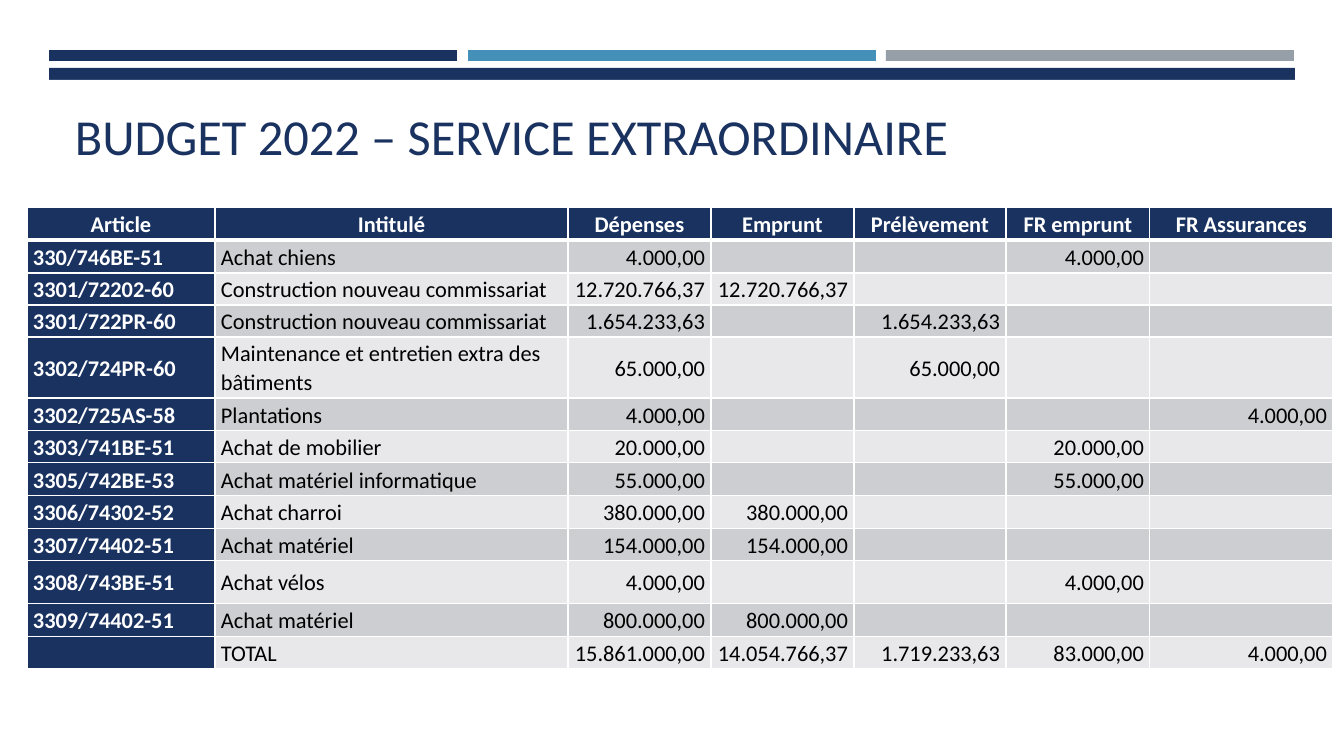
from lxml.etree import SubElement
from pptx import Presentation
from pptx.dml.color import RGBColor
from pptx.enum.shapes import MSO_SHAPE as Shape
from pptx.enum.text import MSO_ANCHOR as Anchor, PP_ALIGN as Align
from pptx.oxml.ns import qn
from pptx.util import Pt

PX = 914400 / 100.8
NAVY = RGBColor(0x1A, 0x32, 0x60)
BLUE = RGBColor(0x45, 0x90, 0xB8)
GREY = RGBColor(0x96, 0x9F, 0xA7)
WHITE = RGBColor(0xFF, 0xFF, 0xFF)
BLACK = RGBColor(0x00, 0x00, 0x00)
DARK_ROW = RGBColor(0xCD, 0xCE, 0xD2)
LIGHT_ROW = RGBColor(0xE8, 0xE8, 0xEA)

HEADINGS = ["Article", "Intitulé", "Dépenses", "Emprunt", "Prélèvement", "FR emprunt", "FR Assurances"]
BUDGET = [
    ["330/746BE-51", "Achat chiens", "4.000,00", "", "", "4.000,00", ""],
    ["3301/72202-60", "Construction nouveau commissariat", "12.720.766,37", "12.720.766,37", "", "", ""],
    ["3301/722PR-60", "Construction nouveau commissariat", "1.654.233,63", "", "1.654.233,63", "", ""],
    ["3302/724PR-60", "Maintenance et entretien extra des bâtiments", "65.000,00", "", "65.000,00", "", ""],
    ["3302/725AS-58", "Plantations", "4.000,00", "", "", "", "4.000,00"],
    ["3303/741BE-51", "Achat de mobilier", "20.000,00", "", "", "20.000,00", ""],
    ["3305/742BE-53", "Achat matériel informatique", "55.000,00", "", "", "55.000,00", ""],
    ["3306/74302-52", "Achat charroi", "380.000,00", "380.000,00", "", "", ""],
    ["3307/74402-51", "Achat matériel", "154.000,00", "154.000,00", "", "", ""],
    ["3308/743BE-51", "Achat vélos", "4.000,00", "", "", "4.000,00", ""],
    ["3309/74402-51", "Achat matériel", "800.000,00", "800.000,00", "", "", ""],
    ["", "TOTAL", "15.861.000,00", "14.054.766,37", "1.719.233,63", "83.000,00", "4.000,00"],
]
COLUMN_WIDTHS = [188, 353, 143, 143, 152, 144, 183]
ROW_HEIGHTS = [33, 33, 32, 32, 61, 33, 32, 33, 33, 32, 43, 33, 32]


def px(*lengths):
    return [round(length * PX) for length in lengths]


def add_run(paragraph, text, size, color, bold=False):
    run = paragraph.add_run()
    run.text = text
    run.font.name = "Calibri"
    run.font.size = Pt(size)
    run.font.bold = bold
    run.font.color.rgb = color


prs = Presentation()
prs.slide_width, prs.slide_height = px(1344, 756)
slide = prs.slides.add_slide(prs.slide_layouts[6])

bands = [
    (49, 68, 1246, 131, NAVY),
    (49, 50, 408, 11, NAVY),
    (886, 50, 408, 11, GREY),
    (468, 50, 408, 11, BLUE),
    (0, 80, 1344, 676, WHITE),
]
for *box, color in bands:
    band = slide.shapes.add_shape(Shape.RECTANGLE, *px(*box))
    band.shadow.inherit = False
    band.fill.solid()
    band.fill.fore_color.rgb = color
    band.line.fill.background()

title = slide.shapes.add_textbox(*px(65, 14, 1212, 157)).text_frame
title.word_wrap = True
title.vertical_anchor = Anchor.BOTTOM
add_run(title.paragraphs[0], "BUDGET 2022 – SERVICE EXTRAORDINAIRE", 36, NAVY)

rows = [HEADINGS] + BUDGET
table_box = px(27, 207, sum(COLUMN_WIDTHS), sum(ROW_HEIGHTS))
table = slide.shapes.add_table(len(rows), len(HEADINGS), *table_box).table
for column, width in zip(table.columns, px(*COLUMN_WIDTHS)):
    column.width = width
for row, height in zip(table.rows, px(*ROW_HEIGHTS)):
    row.height = height

for r, texts in enumerate(rows):
    for c, text in enumerate(texts):
        is_heading = r == 0 or c == 0
        cell = table.cell(r, c)
        cell.margin_left, cell.margin_right, cell.margin_top, cell.margin_bottom = px(6, 6, 0, 0)
        cell.vertical_anchor = Anchor.MIDDLE

        border_widths = {"lnL": 1, "lnR": 1, "lnT": 3 if r == 1 else 1, "lnB": 3 if r == 0 else 1}
        for side, width in border_widths.items():
            border = SubElement(cell._tc.get_or_add_tcPr(), qn(f"a:{side}"), w=str(Pt(width)))
            SubElement(SubElement(border, qn("a:solidFill")), qn("a:srgbClr"), val=str(WHITE))
        cell.fill.solid()
        cell.fill.fore_color.rgb = NAVY if is_heading else DARK_ROW if r % 2 else LIGHT_ROW

        if text:
            paragraph = cell.text_frame.paragraphs[0]
            paragraph.alignment = Align.CENTER if r == 0 else Align.LEFT if c < 2 else Align.RIGHT
            paragraph.line_spacing = 1.07
            paragraph.space_after = Pt(8)
            add_run(paragraph, text, 16, WHITE if is_heading else BLACK, is_heading)

prs.save("out.pptx")
